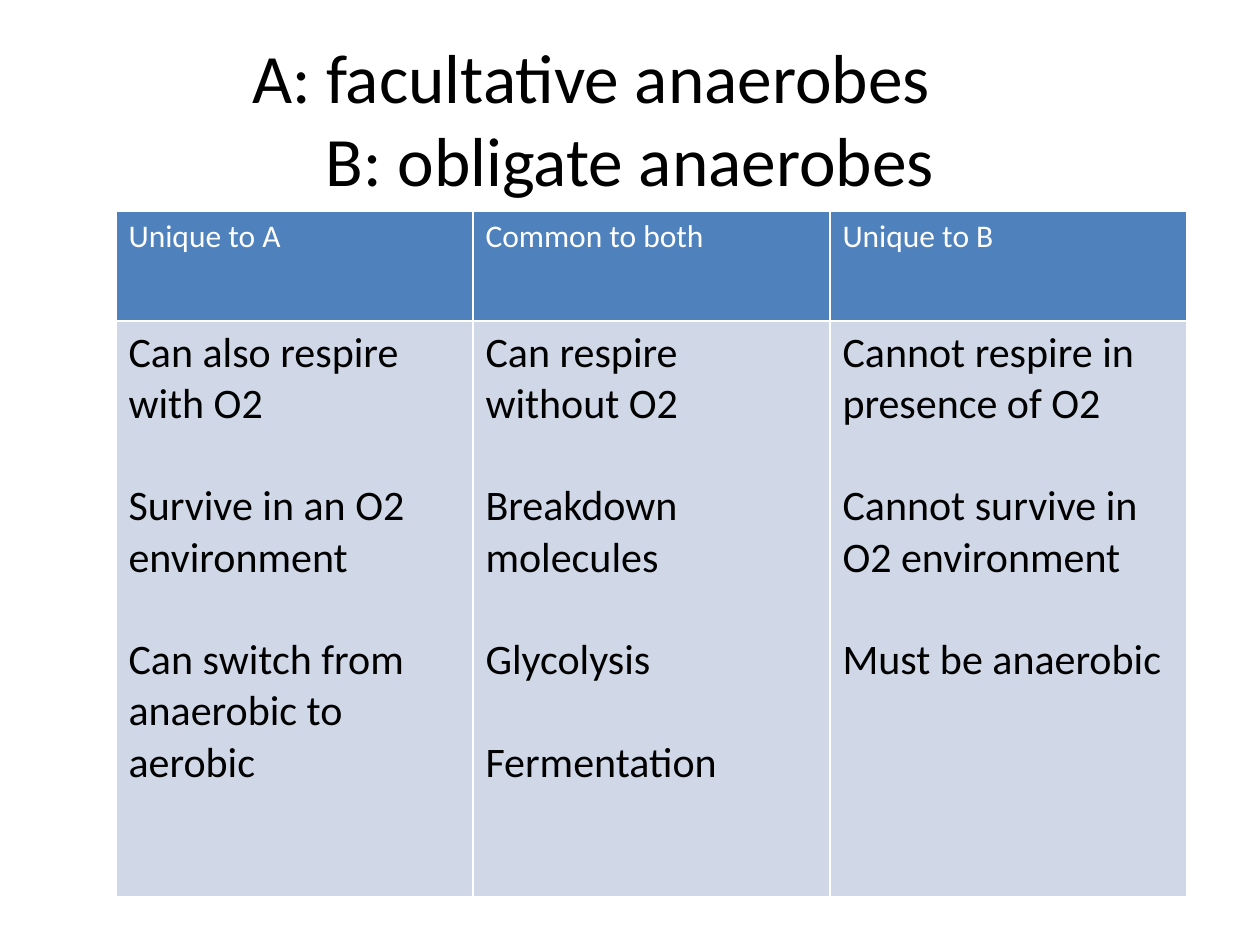
import pptx
import pptx.dml.color
import pptx.enum.text
import pptx.oxml
import pptx.oxml.ns
import pptx.util

PX = 914400 / 126
FONT = "Calibri"
COLUMNS = {
    "Unique to A": [
        "Can also respire with O2",
        "Survive in an O2 environment",
        "Can switch from anaerobic to aerobic",
    ],
    "Common to both": [
        "Can respire without O2",
        "Breakdown molecules",
        "Glycolysis",
        "Fermentation",
    ],
    "Unique to B": [
        "Cannot respire in presence of O2",
        "Cannot survive in O2 environment",
        "Must be anaerobic",
    ],
}


def px(length):
    return pptx.util.Emu(round(length * PX))


def color(hex_value):
    return pptx.dml.color.RGBColor.from_string(hex_value)


def format_font(font, size, hex_value):
    style = {"name": FONT, "size": pptx.util.Pt(size), "bold": False}
    for attribute, value in style.items():
        setattr(font, attribute, value)
    font.color.rgb = color(hex_value)


def add_title(slide, left, top, width, height):
    title = slide.shapes.title
    box = {"left": left, "top": top, "width": width, "height": height}
    for attribute, value in box.items():
        setattr(title, attribute, px(value))
    frame = title.text_frame
    frame.text = "A: facultative anaerobes \t\vB: obligate anaerobes"
    frame.auto_size = pptx.enum.text.MSO_AUTO_SIZE.NONE
    frame.vertical_anchor = pptx.enum.text.MSO_ANCHOR.MIDDLE
    heading = frame.paragraphs[0]
    heading.alignment = pptx.enum.text.PP_ALIGN.CENTER
    format_font(heading.font, 39.6, "000000")
    for run in heading.runs:
        format_font(run.font, 39.6, "000000")


def add_borders(cell, hex_value, points):
    properties = cell._tc.get_or_add_tcPr()
    for side in "LRTB":
        properties.append(pptx.oxml.parse_xml(
            f'<a:ln{side} {pptx.oxml.ns.nsdecls("a")} w="{pptx.util.Pt(points)}">'
            f'<a:solidFill><a:srgbClr val="{hex_value}"/></a:solidFill></a:ln{side}>'
        ))


def fill_cell(cell, statements, size, text_color, fill_color):
    add_borders(cell, "FFFFFF", 1)
    cell.fill.solid()
    cell.fill.fore_color.rgb = color(fill_color)
    cell.text_frame.text = "\n".join(statements)
    for index, paragraph in enumerate(cell.text_frame.paragraphs):
        # One line of space separates the statements
        paragraph.space_before = pptx.util.Pt(29.3 if index else 0)
        format_font(paragraph.runs[0].font, size, text_color)


def add_comparison(slide, left, top, width, height, header_height):
    frame = slide.shapes.add_table(
        2, len(COLUMNS), px(left), px(top), px(width), px(height))
    table = frame.table
    table.rows[0].height = px(header_height)
    table.rows[1].height = px(height - header_height)
    for index, (header, statements) in enumerate(COLUMNS.items()):
        table.columns[index].width = px(width / len(COLUMNS))
        fill_cell(table.cell(0, index), [header], 18, "FFFFFF", "4F81BD")
        fill_cell(table.cell(1, index), statements, 24, "000000", "D0D8E8")


def main():
    presentation = pptx.Presentation()
    presentation.slide_width = px(1260)
    presentation.slide_height = px(945)
    # Title-only layout
    slide = presentation.slides.add_slide(presentation.slide_layouts[5])
    add_title(slide, 63, 38, 1134, 158)
    add_comparison(slide, 116, 211, 1071, 686, 110)
    presentation.save("out.pptx")


if __name__ == "__main__":
    main()
